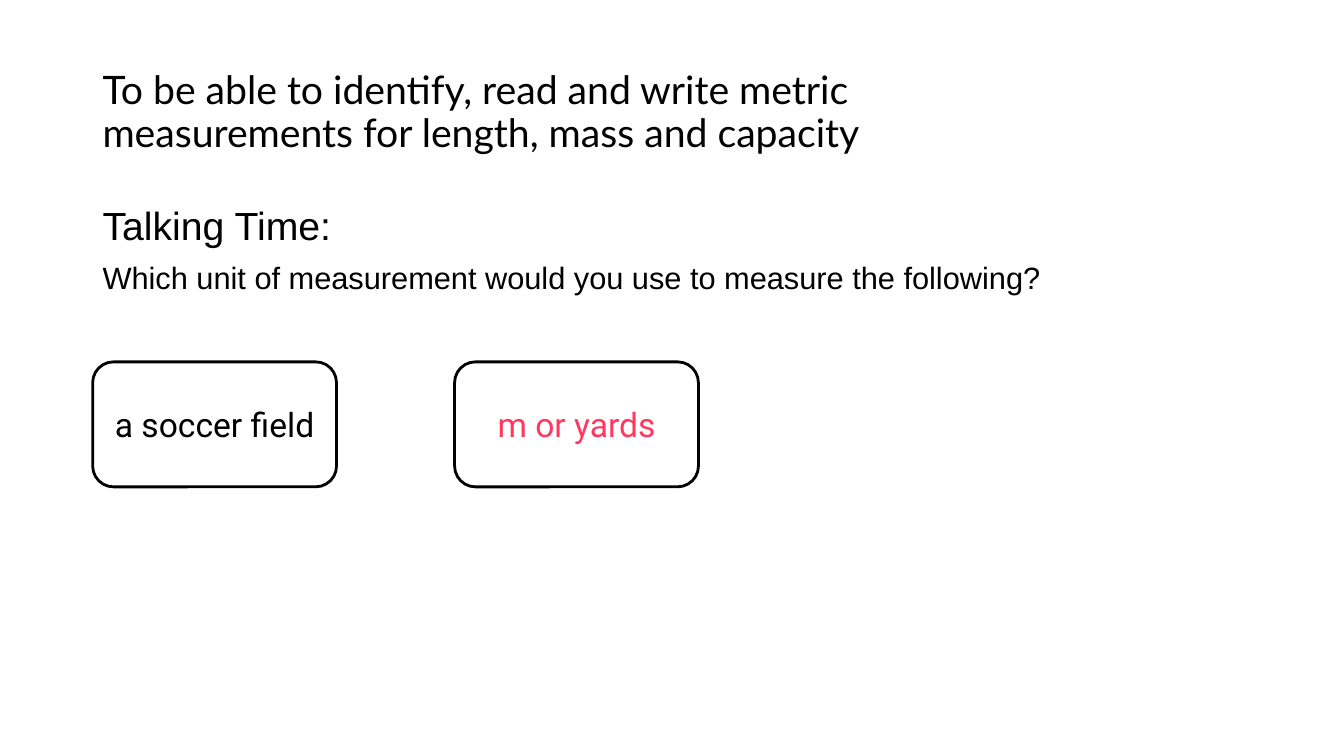
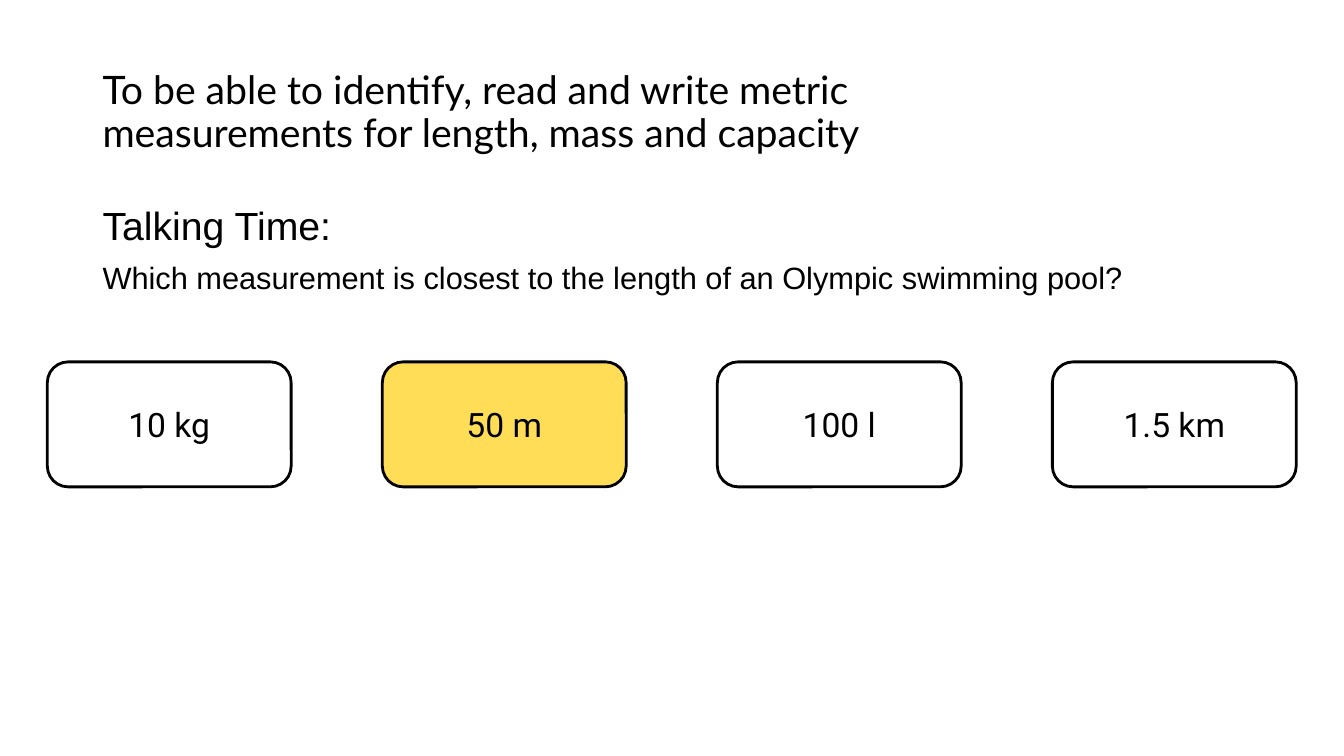
from lxml.etree import SubElement
from pptx import Presentation
from pptx.dml.color import RGBColor
from pptx.enum.shapes import MSO_SHAPE as Shape
from pptx.enum.text import MSO_ANCHOR as Anchor, PP_ALIGN as Align
from pptx.oxml.ns import qn
from pptx.util import Pt

BLACK = RGBColor(0x00, 0x00, 0x00)
WHITE = RGBColor(0xFF, 0xFF, 0xFF)
YELLOW = RGBColor(0xFF, 0xDD, 0x57)
PINK = RGBColor(0xFF, 0x38, 0x60)

OBJECTIVE = ("To be able to identify, read and write metric "
             "measurements for length, mass and capacity")


class Lesson:
    title_font, body_font, card_font = "Lato", "Arial", "Roboto"
    margin = 66.2
    card_top, card_width, card_height = 258.5, 174.2, 89.3

    def __init__(self):
        self.deck = Presentation()
        self.deck.slide_width, self.deck.slide_height = Pt(960), Pt(540)
        self.slide = None

    def new_slide(self, question):
        self.slide = self.deck.slides.add_slide(self.deck.slide_layouts[6])
        self.panel()
        self.text(28.8, 691.2, 104.4, [(OBJECTIVE, 28)], self.title_font, Anchor.MIDDLE)
        self.text(144, 828, 342.7, [("Talking Time:", 28), (question, 22)], self.body_font)

    def box(self, preset, left, top, width, height, fill, line, weight):
        shape = self.slide.shapes.add_shape(preset, Pt(left), Pt(top), Pt(width), Pt(height))
        shape.shadow.inherit = False
        shape.fill.solid()
        shape.fill.fore_color.rgb = fill
        shape.line.color.rgb = line
        shape.line.width = Pt(weight)
        return shape

    def panel(self):
        panel = self.box(Shape.RECTANGLE, 12, 10.5, 936, 520, WHITE, WHITE, 1)
        colour = panel.fill._xPr.find(qn("a:solidFill"))[0]
        SubElement(colour, qn("a:alpha"), val="90000")

    def run(self, paragraph, words, size, font, colour=BLACK):
        run = paragraph.add_run()
        run.text = words
        run.font.size = Pt(size)
        run.font.name = font
        run.font.color.rgb = colour

    def text(self, top, width, height, lines, font, anchor=Anchor.TOP):
        frame = self.slide.shapes.add_textbox(
            Pt(self.margin), Pt(top), Pt(width), Pt(height)).text_frame
        frame.word_wrap = True
        frame.vertical_anchor = anchor
        for index, (words, size) in enumerate(lines):
            paragraph = frame.add_paragraph() if index else frame.paragraphs[0]
            paragraph.line_spacing = 0.9
            if index:
                paragraph.space_before = Pt(10)
            self.run(paragraph, words, size, font)

    def card(self, left, words, fill=WHITE, colour=BLACK):
        card = self.box(Shape.ROUNDED_RECTANGLE, left, self.card_top,
                        self.card_width, self.card_height, fill, BLACK, 2)
        frame = card.text_frame
        frame.word_wrap = True
        frame.vertical_anchor = Anchor.MIDDLE
        frame.paragraphs[0].alignment = Align.CENTER
        self.run(frame.paragraphs[0], words, 24, self.card_font, colour)

    def card_row(self, left, pitch, cards):
        for column, (words, fill, colour) in enumerate(cards):
            self.card(left + column * pitch, words, fill, colour)


def main():
    lesson = Lesson()

    lesson.new_slide("Which unit of measurement would you use to measure the following?")
    lesson.card_row(lesson.margin, 258.5, [
        ("a soccer field", WHITE, BLACK),
        ("m or yards", WHITE, PINK),
    ])

    lesson.new_slide("Which measurement is closest to the length of an Olympic swimming pool?")
    lesson.card_row(33.8, 239.3, [
        ("10 kg", WHITE, BLACK),
        ("50 m", YELLOW, BLACK),
        ("100 l", WHITE, BLACK),
        ("1.5 km", WHITE, BLACK),
    ])

    lesson.deck.save("out.pptx")


if __name__ == "__main__":
    main()
